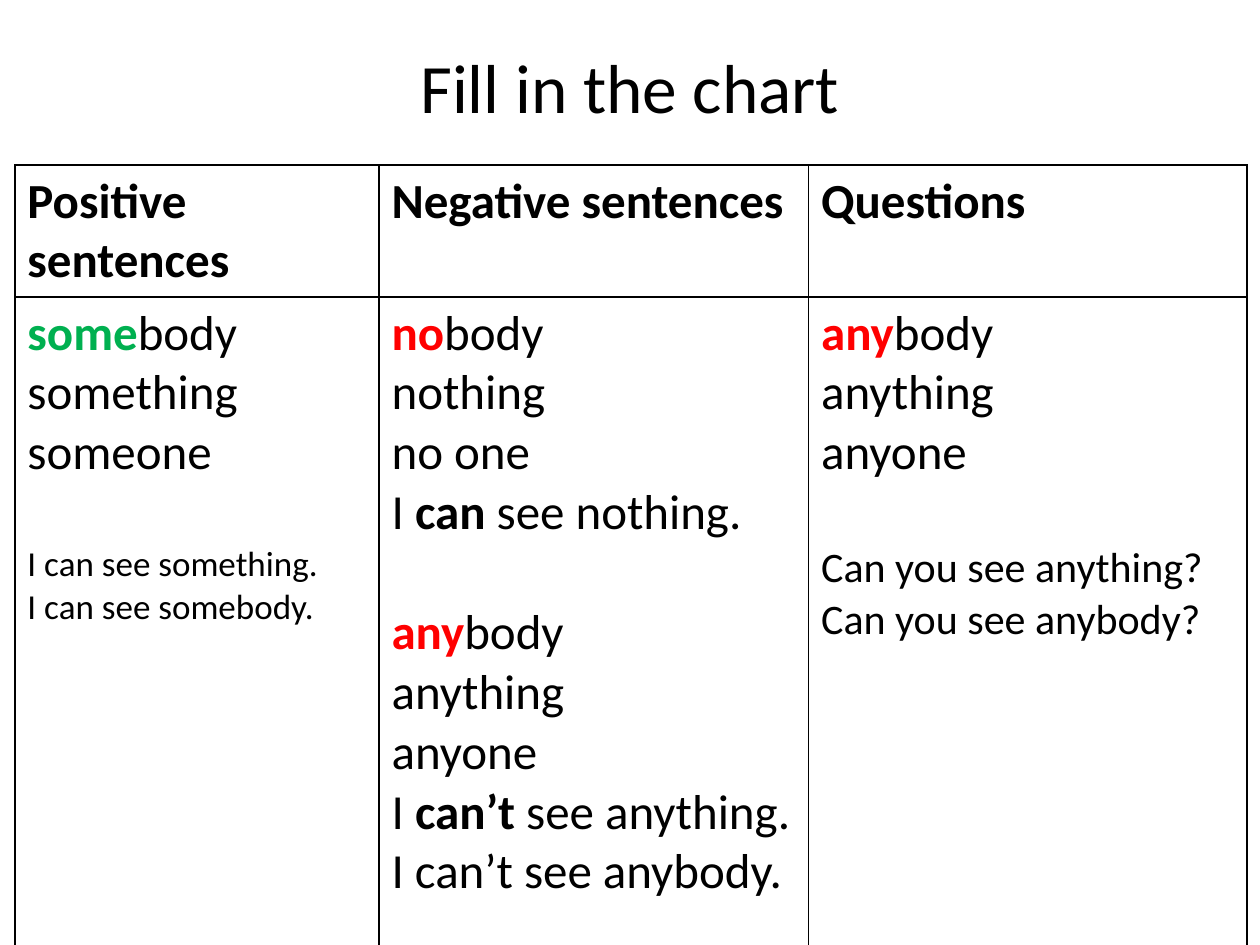
"""Build a grammar slide with a chart of indefinite pronouns."""
from lxml.etree import SubElement
from pptx import Presentation
from pptx.dml.color import RGBColor
from pptx.enum.text import MSO_ANCHOR, PP_ALIGN
from pptx.oxml.ns import qn
from pptx.util import Cm, Pt

COLORS = {"black": "000000", "green": "00B050", "red": "FF0000", "white": "FFFFFF"}
FONT = "Calibri"
LINE_HEIGHT = 1.22
HEADERS = ["Positive sentences", "Negative sentences", "Questions"]
COLUMN_WIDTHS = [7.34, 8.66, 8.84]
ROW_HEIGHTS = [2.66, 13.27]
GROUPS = [
    [
        (28, [("", "some", "body", "green"), "something", "someone"]),
        (20, ["I can see something.", "I can see somebody."]),
    ],
    [
        (28, [("", "no", "body", "red"), "nothing", "no one",
              ("I ", "can", " see nothing.", "black")]),
        (28, [("", "any", "body", "red"), "anything", "anyone",
              ("I ", "can’t", " see anything.", "black"), "I can’t see anybody."]),
    ],
    [
        (28, [("", "any", "body", "red"), "anything", "anyone"]),
        (24, ["Can you see anything?", "Can you see anybody?"]),
    ],
]


def style(paragraph, size, bold=False):
    font = paragraph.font
    font.name, font.size, font.bold = FONT, Pt(size), bold
    font.color.rgb = RGBColor.from_string(COLORS["black"])


def add_border(cell, side):
    line = SubElement(cell._tc.get_or_add_tcPr(), qn(f"a:{side}"), w=str(Pt(1)))
    fill = SubElement(line, qn("a:solidFill"))
    SubElement(fill, qn("a:srgbClr"), val=COLORS["black"])


presentation = Presentation()
presentation.slide_width, presentation.slide_height = Cm(25.4), Cm(19.05)
slide = presentation.slides.add_slide(presentation.slide_layouts[6])

title = slide.shapes.add_textbox(Cm(1.27), Cm(0.76), Cm(22.86), Cm(1.96))
title.text_frame.word_wrap = True
title.text_frame.vertical_anchor = MSO_ANCHOR.MIDDLE
paragraph = title.text_frame.paragraphs[0]
paragraph.text = "Fill in the chart"
paragraph.alignment = PP_ALIGN.CENTER
style(paragraph, 39.6)

table = slide.shapes.add_table(
    2, 3, Cm(0.3), Cm(3.33), Cm(sum(COLUMN_WIDTHS)), Cm(sum(ROW_HEIGHTS))
).table
table.first_row = table.horz_banding = False
for column, width in zip(table.columns, COLUMN_WIDTHS):
    column.width = Cm(width)
for row, height in zip(table.rows, ROW_HEIGHTS):
    row.height = Cm(height)
for cell in table.iter_cells():
    for side in ("lnL", "lnR", "lnT", "lnB"):
        add_border(cell, side)
    cell.fill.solid()
    cell.fill.fore_color.rgb = RGBColor.from_string(COLORS["white"])

for index, (header, groups) in enumerate(zip(HEADERS, GROUPS)):
    header_cell = table.cell(0, index)
    header_cell.text = header
    style(header_cell.text_frame.paragraphs[0], 28, True)

    frame = table.cell(1, index).text_frame
    paragraph = frame.paragraphs[0]
    for group_index, (size, lines) in enumerate(groups):
        for line_index, line in enumerate(lines):
            if group_index or line_index:
                paragraph = frame.add_paragraph()
            if group_index and not line_index:
                paragraph.space_before = Pt(round(28 * LINE_HEIGHT, 1))
            style(paragraph, size)
            if isinstance(line, str):
                paragraph.add_run().text = line
                continue
            before, strong, after, color = line
            if before:
                paragraph.add_run().text = before
            run = paragraph.add_run()
            run.text = strong
            run.font.bold = True
            run.font.color.rgb = RGBColor.from_string(COLORS[color])
            paragraph.add_run().text = after

presentation.save("out.pptx")
